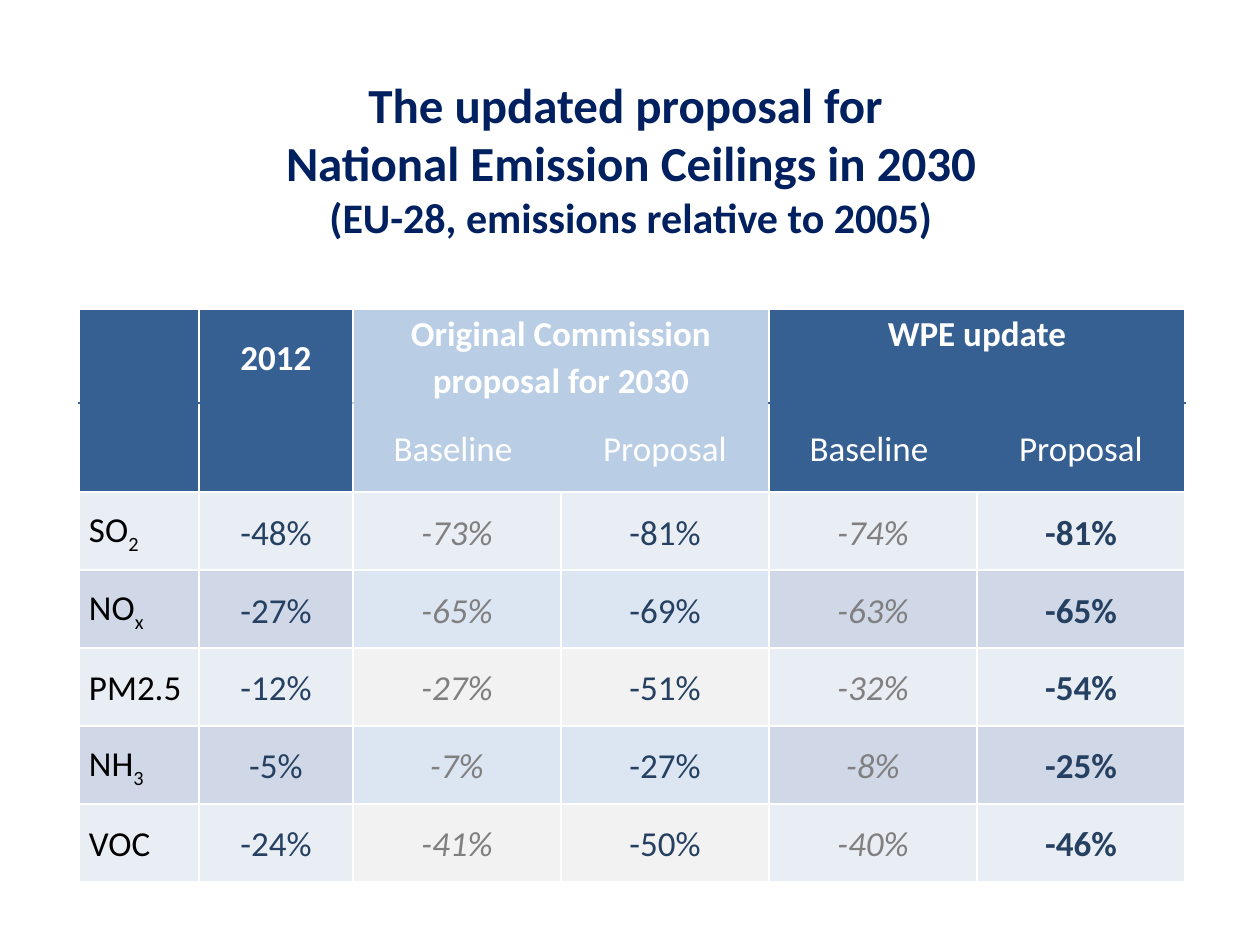
from lxml.etree import SubElement
from pptx import Presentation
from pptx.dml.color import RGBColor
from pptx.enum.text import MSO_ANCHOR as Anchor, PP_ALIGN as Align
from pptx.oxml.ns import qn
from pptx.util import Emu, Pt

PX_PER_INCH = 126
NAVY = RGBColor(0x00, 0x20, 0x60)
BLUE = RGBColor(0x37, 0x60, 0x92)
PALE_BLUE = RGBColor(0xB9, 0xCD, 0xE5)
DARK_BLUE = RGBColor(0x25, 0x40, 0x61)
GRAY = RGBColor(0x80, 0x80, 0x80)
WHITE = RGBColor(0xFF, 0xFF, 0xFF)
BLACK = RGBColor(0x00, 0x00, 0x00)
BAND_LIGHT = RGBColor(0xE9, 0xED, 0xF4)
BAND_DARK = RGBColor(0xD0, 0xD8, 0xE8)
ORIGINAL_LIGHT = RGBColor(0xF2, 0xF2, 0xF2)
ORIGINAL_DARK = RGBColor(0xDC, 0xE6, 0xF2)

FONT = "Calibri"
COLUMN_WIDTHS = [120, 154, 208, 208, 208, 208]
ROW_HEIGHTS = [94, 89] + [78] * 5
ORIGINAL_COLUMNS = (2, 3)
BASELINE_COLUMNS = (2, 4)
HEADERS = [
    ["", "2012", "Original Commission proposal for 2030", "", "WPE update", ""],
    ["", "", "Baseline ", "Proposal", "Baseline ", "Proposal"],
]
# Pollutant, subscript, then the percentages
EMISSIONS = [
    ("SO", "2", [-48, -73, -81, -74, -81]),
    ("NO", "x", [-27, -65, -69, -63, -65]),
    ("PM2.5", "", [-12, -27, -51, -32, -54]),
    ("NH", "3", [-5, -7, -27, -8, -25]),
    ("VOC", "", [-24, -41, -50, -40, -46]),
]


def px(length):
    return Emu(round(length * 914400 / PX_PER_INCH))


def style_font(font, size, color, bold=False, italic=False):
    font.name = FONT
    font.size = Pt(size)
    font.color.rgb = color
    font.bold = bold
    font.italic = italic


def add_title(slide, left, top, width, height):
    frame = slide.shapes.add_textbox(px(left), px(top), px(width), px(height)).text_frame
    frame.word_wrap = True
    frame.vertical_anchor = Anchor.MIDDLE
    frame.text = ("The updated proposal for \vNational Emission Ceilings in 2030\v"
                  "(EU-28, emissions relative to 2005)")
    paragraph = frame.paragraphs[0]
    paragraph.alignment = Align.CENTER
    for run, size in zip(paragraph.runs, (28, 28, 24)):
        style_font(run.font, size, NAVY, bold=True)


def set_borders(cell, colors):
    properties = cell._tc.get_or_add_tcPr()
    for position, (side, color) in enumerate(colors.items()):
        line = SubElement(properties, qn(f"a:{side}"), w=str(Pt(1)))
        fill = SubElement(line, qn("a:solidFill"))
        SubElement(fill, qn("a:srgbClr"), val=str(color))
        properties.insert(position, line)


def cell_fill(row, column):
    original = column in ORIGINAL_COLUMNS
    if row < len(HEADERS):
        return PALE_BLUE if original else BLUE
    if row % 2:
        return ORIGINAL_DARK if original else BAND_DARK
    # The first body row has one tint throughout
    return ORIGINAL_LIGHT if original and row > len(HEADERS) else BAND_LIGHT


def format_cell(cell, row, column):
    fill = cell_fill(row, column)
    cell.fill.solid()
    cell.fill.fore_color.rgb = fill
    cell.vertical_anchor = Anchor.MIDDLE
    cell.margin_left = px(10 if row >= len(HEADERS) and column == 0 else 3)
    cell.margin_right = px(3)
    cell.margin_top = cell.margin_bottom = 0
    # Header edges inside one group take the colour of the fill
    in_header = row < len(HEADERS)
    grouped = in_header and column >= 2
    set_borders(cell, {
        "lnL": fill if grouped and column % 2 else WHITE,
        "lnR": fill if grouped and column % 2 == 0 and row == 1 else WHITE,
        "lnT": fill if row == 1 else WHITE,
        "lnB": fill if row == 0 else WHITE,
    })


def write_cell(cell, text, color, alignment=Align.CENTER, bold=False, italic=False, subscript=""):
    cell.text_frame.text = text
    paragraph = cell.text_frame.paragraphs[0]
    paragraph.alignment = alignment
    paragraph.line_spacing = 1.1
    if subscript:
        run = paragraph.add_run()
        run.text = subscript
        run.font._element.set("baseline", "-25000")
    for run in paragraph.runs:
        style_font(run.font, 20, color, bold, italic)


def add_emission_table(slide, left, top):
    rows, columns = len(ROW_HEIGHTS), len(COLUMN_WIDTHS)
    table = slide.shapes.add_table(rows, columns, px(left), px(top),
                                   px(sum(COLUMN_WIDTHS)), px(sum(ROW_HEIGHTS))).table
    table.first_row = table.horz_banding = False
    for column, width in zip(table.columns, COLUMN_WIDTHS):
        column.width = px(width)
    for row, height in zip(table.rows, ROW_HEIGHTS):
        row.height = px(height)
    for row in range(rows):
        for column in range(columns):
            format_cell(table.cell(row, column), row, column)

    # Two header rows
    for column in (2, 4):
        table.cell(0, column).merge(table.cell(0, column + 1))
    for row, labels in enumerate(HEADERS):
        for column, label in enumerate(labels):
            if label:
                write_cell(table.cell(row, column), label, WHITE, bold=row == 0)
    table.cell(0, 4).vertical_anchor = Anchor.TOP

    # One row for each pollutant
    for row, (name, subscript, values) in enumerate(EMISSIONS, len(HEADERS)):
        write_cell(table.cell(row, 0), name, BLACK, Align.LEFT, subscript=subscript)
        for column, value in enumerate(values, 1):
            baseline = column in BASELINE_COLUMNS
            write_cell(table.cell(row, column), f"{value}%", GRAY if baseline else DARK_BLUE,
                       bold=column == columns - 1, italic=baseline)


def main():
    presentation = Presentation()
    presentation.slide_width, presentation.slide_height = px(1260), px(945)
    slide = presentation.slides.add_slide(presentation.slide_layouts[6])
    add_title(slide, 64, 79, 1134, 158)
    add_emission_table(slide, 79, 309)
    presentation.save("out.pptx")


if __name__ == "__main__":
    main()
